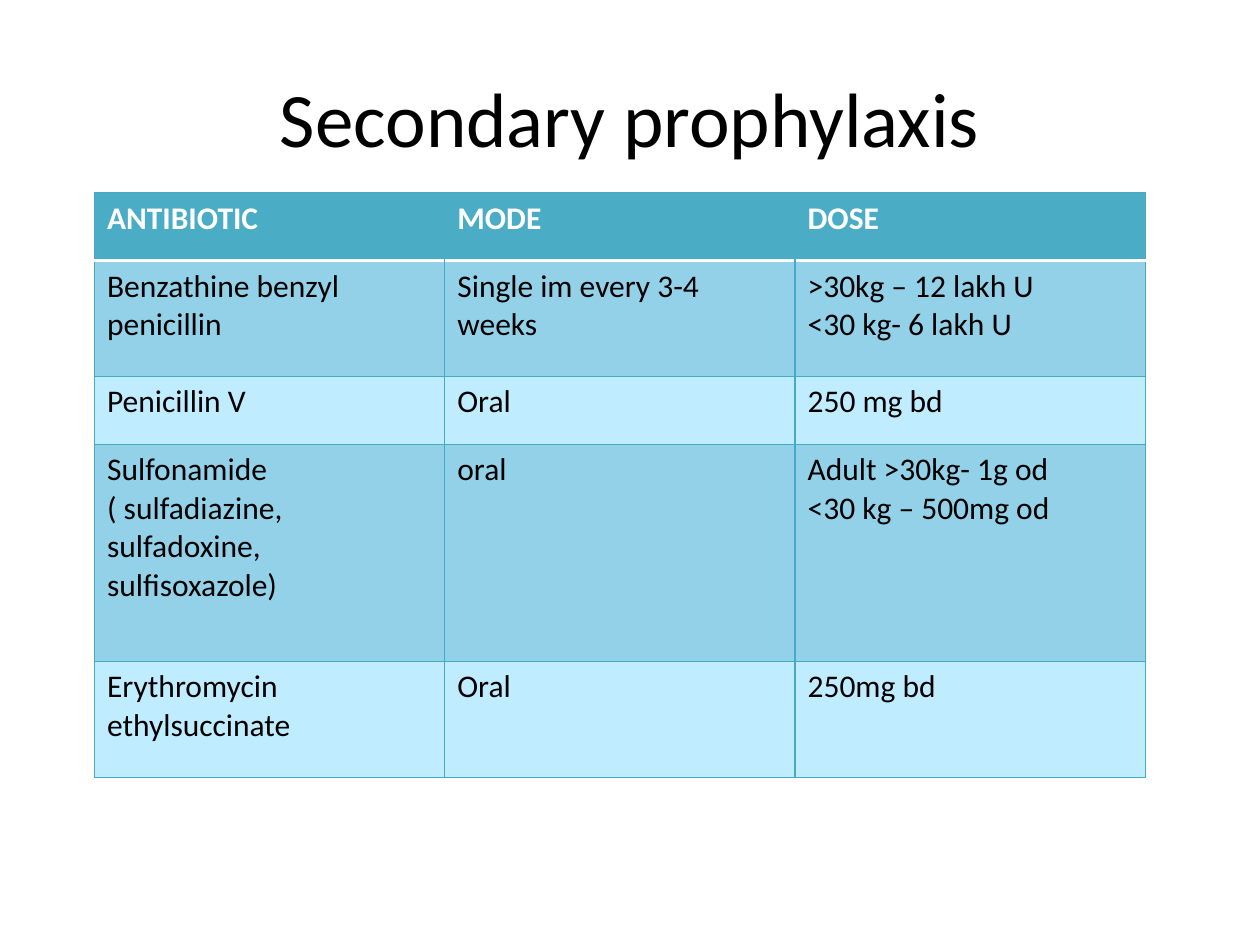
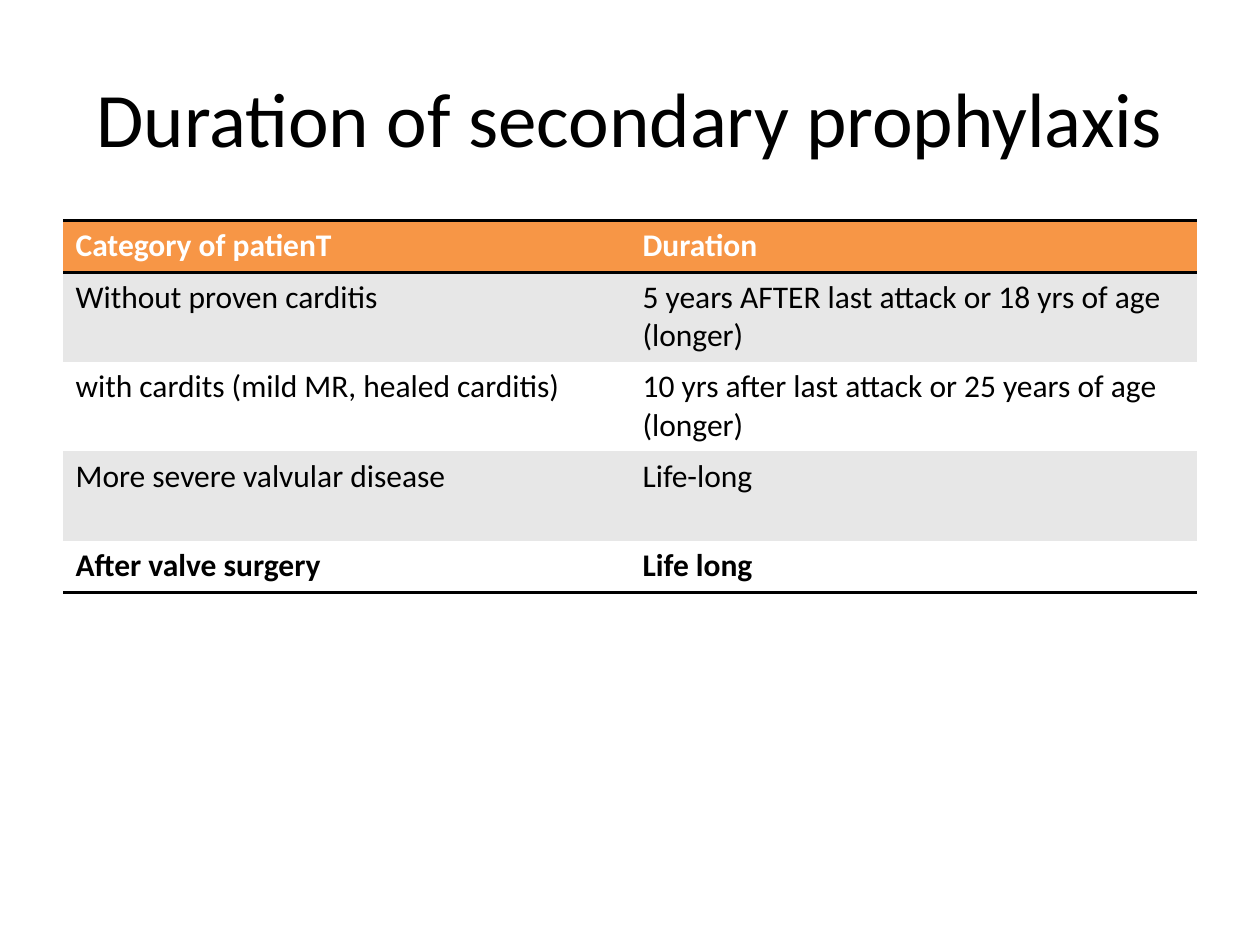
"""Build two slides on secondary prophylaxis, each a title over a table."""
from lxml.etree import SubElement
from pptx import Presentation
from pptx.dml.color import RGBColor
from pptx.enum.text import MSO_ANCHOR, PP_ALIGN
from pptx.oxml.ns import qn
from pptx.util import Inches, Pt

FONT = "Calibri"
BLACK, WHITE = "000000", "FFFFFF"
TEAL_RULE = ("46AAC5", 0.75)
WHITE_RULE = (WHITE, 2)
BLACK_RULE = (BLACK, 2)

topics = [
    {
        "title": "Secondary prophylaxis",
        "left": 0.75, "top": 1.53, "column": 2.78,
        "heights": [0.54, 0.92, 0.54, 1.72, 0.92],
        "header": "4BACC6", "bands": ["92D1E8", "BFECFF"],
        "top_rule": TEAL_RULE, "header_rule": WHITE_RULE,
        "grid": TEAL_RULE, "bottom_rule": TEAL_RULE, "bold_last": False,
        "rows": [
            ["ANTIBIOTIC", "MODE", "DOSE"],
            ["Benzathine benzyl penicillin", "Single im every 3-4 weeks",
             ">30kg – 12 lakh U\n<30 kg- 6 lakh U"],
            ["Penicillin V", "Oral", "250 mg bd"],
            ["Sulfonamide ( sulfadiazine, sulfadoxine, sulfisoxazole)", "oral",
             "Adult >30kg- 1g od\n<30 kg – 500mg od"],
            ["Erythromycin ethylsuccinate", "Oral", "250mg bd"],
        ],
    },
    {
        "title": "Duration of secondary prophylaxis",
        "left": 0.5, "top": 1.75, "column": 4.5,
        "heights": [0.41, 0.71, 0.71, 0.71, 0.41],
        "header": "F79646", "bands": ["E7E7E7", WHITE],
        "top_rule": BLACK_RULE, "header_rule": BLACK_RULE,
        "grid": None, "bottom_rule": BLACK_RULE, "bold_last": True,
        "rows": [
            ["Category of patienT", "Duration"],
            ["Without proven carditis",
             "5 years AFTER last attack or 18 yrs of age (longer)"],
            ["with cardits (mild MR, healed carditis)",
             "10 yrs after last attack or 25 years of age (longer)"],
            ["More severe valvular disease", "Life-long"],
            ["After valve surgery", "Life long"],
        ],
    },
]


def style_text(paragraph, size, color, bold=False):
    font = paragraph.font
    font.name, font.size, font.bold = FONT, Pt(size), bold
    font.color.rgb = RGBColor.from_string(color)


def add_border(cell, side, rule):
    line = SubElement(cell._tc.get_or_add_tcPr(), qn(f"a:ln{side}"))
    if rule is None:
        line.set("w", "0")
        SubElement(line, qn("a:noFill"))
        return
    color, width = rule
    line.set("w", str(Pt(width)))
    SubElement(SubElement(line, qn("a:solidFill")), qn("a:srgbClr")).set("val", color)


prs = Presentation()
prs.slide_width, prs.slide_height = Inches(10), Inches(7.5)

for topic in topics:
    slide = prs.slides.add_slide(prs.slide_layouts[5])
    title = slide.shapes.title
    title.left, title.top = Inches(0.5), Inches(0.3)
    title.width, title.height = Inches(9), Inches(1.25)
    title.text_frame.text = topic["title"]
    title.text_frame.vertical_anchor = MSO_ANCHOR.MIDDLE
    heading = title.text_frame.paragraphs[0]
    heading.alignment = PP_ALIGN.CENTER
    style_text(heading, 44, BLACK)

    rows, heights = topic["rows"], topic["heights"]
    last_row, last_col = len(rows) - 1, len(rows[0]) - 1
    table = slide.shapes.add_table(
        len(rows), len(rows[0]), Inches(topic["left"]), Inches(topic["top"]),
        Inches(topic["column"] * len(rows[0])), Inches(sum(heights))).table
    for column in table.columns:
        column.width = Inches(topic["column"])

    rules = [topic["top_rule"], topic["header_rule"]]
    rules += [topic["grid"]] * (last_row - 1) + [topic["bottom_rule"]]
    for r, row in enumerate(rows):
        table.rows[r].height = Inches(heights[r])
        is_header = r == 0
        fill = topic["header"] if is_header else topic["bands"][(r - 1) % 2]
        bold = is_header or (r == last_row and topic["bold_last"])
        for c, text in enumerate(row):
            cell = table.cell(r, c)
            cell.text = text
            for paragraph in cell.text_frame.paragraphs:
                style_text(paragraph, 18, WHITE if is_header else BLACK, bold)
            add_border(cell, "L", None if is_header and c > 0 else topic["grid"])
            add_border(cell, "R", None if is_header and c < last_col else topic["grid"])
            add_border(cell, "T", rules[r])
            add_border(cell, "B", rules[r + 1])
            cell.fill.solid()
            cell.fill.fore_color.rgb = RGBColor.from_string(fill)

prs.save("out.pptx")
